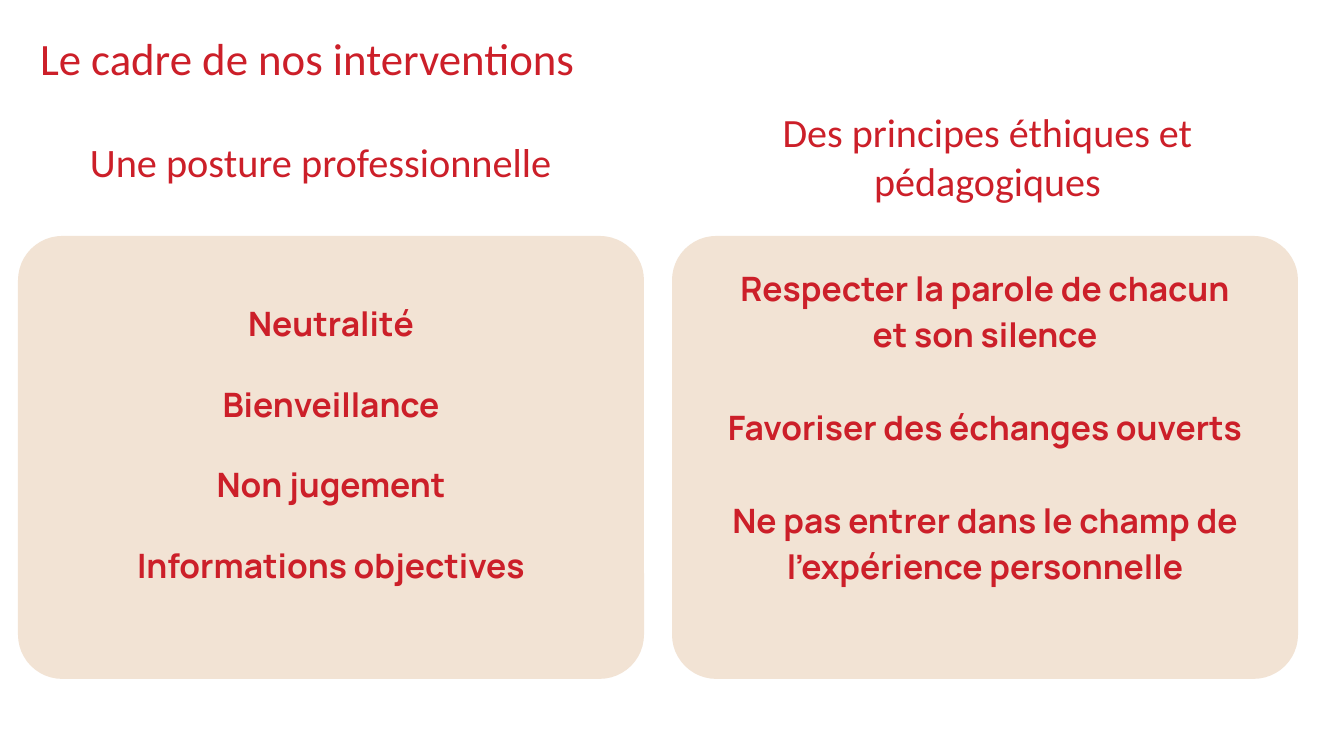
from pptx import Presentation, util as u
from pptx.dml.color import RGBColor
from pptx.enum import shapes, text

EMU_PER_PX = u.Inches(10) / 1344
COLORS = {"red": "CC1F29", "sand": "F2E3D4"}
LEFT, CENTER = text.PP_ALIGN.LEFT, text.PP_ALIGN.CENTER
TOP, MIDDLE = text.MSO_ANCHOR.TOP, text.MSO_ANCHOR.MIDDLE


def px(length):
    return u.Emu(round(length * EMU_PER_PX))


def write(shape, lines, size, font="Calibri", bold=False, align=LEFT,
          anchor=MIDDLE, spacing=1.0, gap=0, margin_x=13, margin_top=13, margin_bottom=13):
    """Fill a shape with (text, starts_group) lines; gap is set before each later group."""
    frame = shape.text_frame
    frame.word_wrap = True
    frame.auto_size = text.MSO_AUTO_SIZE.NONE
    frame.vertical_anchor = anchor
    frame.margin_left = frame.margin_right = px(margin_x)
    frame.margin_top, frame.margin_bottom = px(margin_top), px(margin_bottom)
    for index, (line, starts_group) in enumerate(lines):
        paragraph = frame.paragraphs[0] if index == 0 else frame.add_paragraph()
        paragraph.alignment = align
        paragraph.line_spacing = spacing
        paragraph.space_before = u.Pt(gap if index and starts_group else 0)
        run = paragraph.add_run()
        run.text = line
        run.font.name = font
        run.font.size = u.Pt(size)
        run.font.bold = bold
        run.font.color.rgb = RGBColor.from_string(COLORS["red"])


def add_title(slide, title, left, top, width, height):
    holder = slide.shapes.title
    holder.left, holder.top, holder.width, holder.height = map(px, (left, top, width, height))
    write(holder, [(title, True)], 24, spacing=0.9)


def add_heading(slide, heading, left, top, width, height, **style):
    box = slide.shapes.add_textbox(*map(px, (left, top, width, height)))
    write(box, [(heading, True)], **style)


def add_card(slide, left, lines, **style):
    card = slide.shapes.add_shape(shapes.MSO_SHAPE.ROUNDED_RECTANGLE,
                                  *map(px, (left, 236, 626, 443)))
    card.adjustments[0] = 0.1
    card.shadow.inherit = False
    card.fill.solid()
    card.fill.fore_color.rgb = RGBColor.from_string(COLORS["sand"])
    card.line.fill.background()
    write(card, lines, 18, font="Manrope", bold=True, align=CENTER, anchor=TOP, **style)


def main():
    deck = Presentation()
    deck.slide_width, deck.slide_height = px(1344), px(756)
    slide = deck.slides.add_slide(deck.slide_layouts[5])

    add_title(slide, "Le cadre de nos interventions", 27, 20, 602, 81)
    add_heading(slide, "Une posture professionnelle", 77, 121, 536, 81, size=21.6)
    add_heading(slide, "Des principes éthiques et pédagogiques", 692, 101, 591, 110,
                size=21.5, align=CENTER, margin_top=7, margin_bottom=7)

    posture = ["Neutralité", "Bienveillance", "Non jugement", "Informations objectives"]
    add_card(slide, 18, [(quality, True) for quality in posture], gap=21.6, margin_top=54)

    principles = [
        ("Respecter la parole de chacun", True),
        ("et son silence", False),
        ("Favoriser des échanges ouverts", True),
        ("Ne pas entrer dans le champ de l’expérience personnelle", True),
    ]
    add_card(slide, 672, principles, spacing=1.15, gap=24.8)

    deck.save("out.pptx")


if __name__ == "__main__":
    main()
